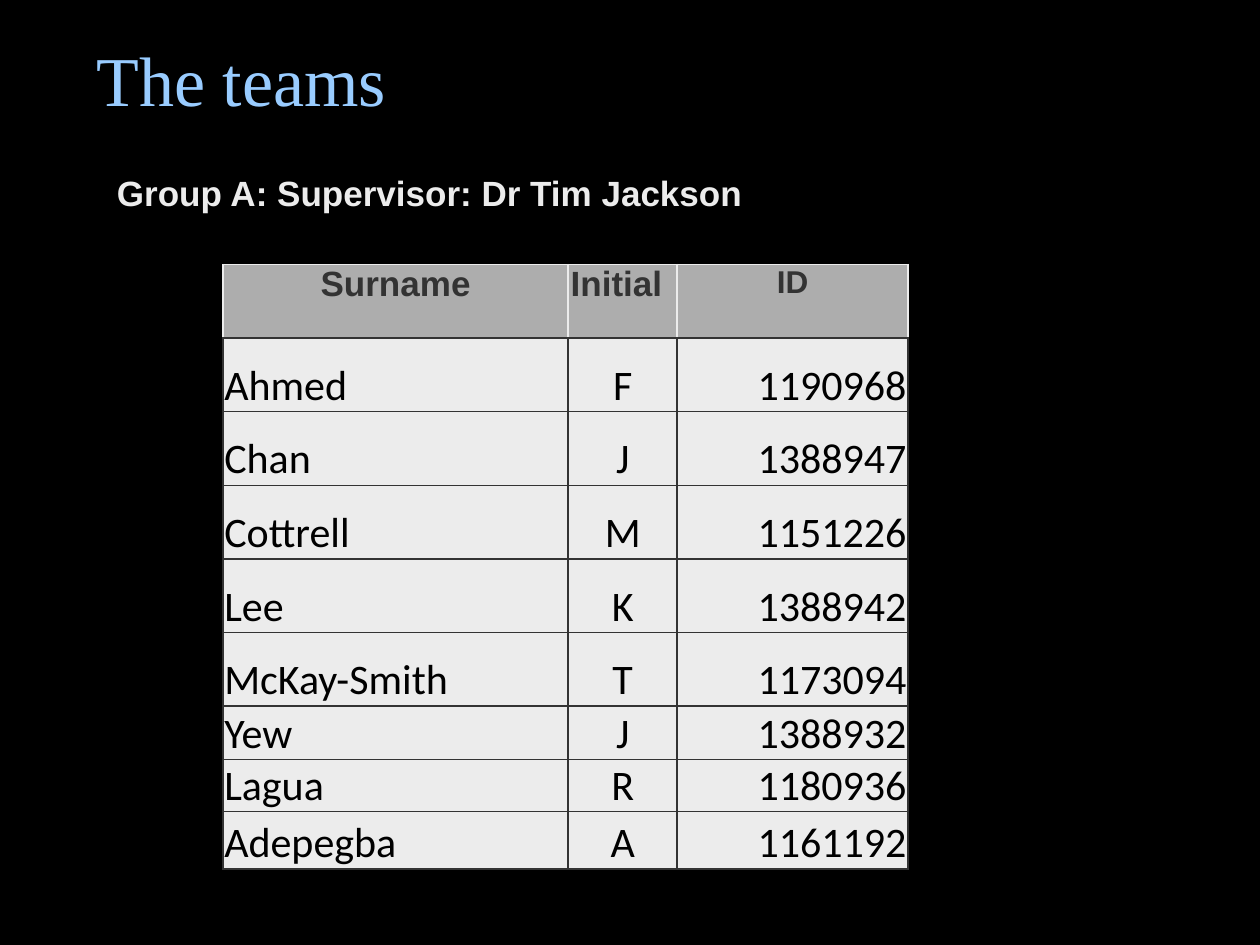
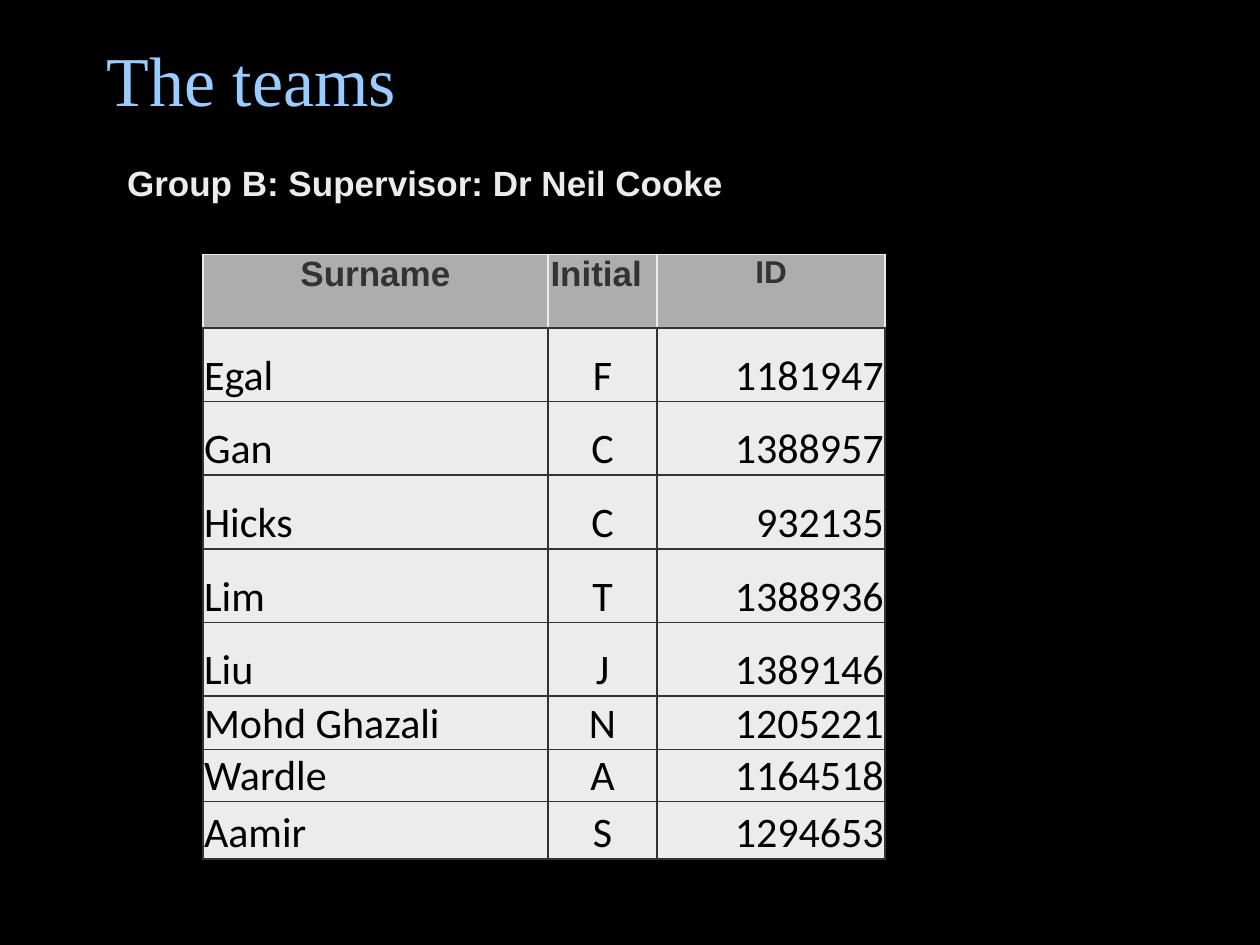
from lxml import etree
from pptx import Presentation
from pptx.dml.color import RGBColor
from pptx.enum.text import MSO_ANCHOR, PP_ALIGN
from pptx.oxml.ns import qn
from pptx.util import Inches, Pt

LEFT, CENTER, RIGHT = PP_ALIGN.LEFT, PP_ALIGN.CENTER, PP_ALIGN.RIGHT
TOP, MIDDLE, BOTTOM = MSO_ANCHOR.TOP, MSO_ANCHOR.MIDDLE, MSO_ANCHOR.BOTTOM

COLORS = {
    "background": "000000",
    "title": "99CCFF",
    "light": "ECECEC",
    "header": "ADADAD",
    "dark": "333333",
    "body": "000000",
}

presentation = Presentation()
presentation.slide_width = Inches(10)
presentation.slide_height = Inches(7.5)
COLUMN = presentation.slide_width / 100
ROW = presentation.slide_height / 75

ROW_HEIGHTS = [5.84] * 6 + [4.25, 4.14, 4.57]
HEADINGS = [("Surname", CENTER, 20), ("Initial", LEFT, 20), ("ID", CENTER, 18)]
BODY_ALIGNMENTS = [LEFT, CENTER, RIGHT]

# Positions are (column, row) on the slide grid.
TEAMS = [
    {
        "supervisor": "Group A: Supervisor: Dr Tim Jackson",
        "title_at": (6.7, 0),
        "supervisor_at": (8.3, 13.1),
        "supervisor_width": 59.8,
        "table_at": (17.7, 21),
        "column_widths": [27.4, 8.65, 18.3],
        "members": [
            ("Ahmed", "F", "1190968"),
            ("Chan", "J", "1388947"),
            ("Cottrell", "M", "1151226"),
            ("Lee", "K", "1388942"),
            ("McKay-Smith", "T", "1173094"),
            ("Yew", "J", "1388932"),
            ("Lagua", "R", "1180936"),
            ("Adepegba", "A", "1161192"),
        ],
    },
    {
        "supervisor": "Group B: Supervisor: Dr Neil Cooke",
        "title_at": (7.5, 0),
        "supervisor_at": (9.1, 12.3),
        "supervisor_width": 55.1,
        "table_at": (16.1, 20.2),
        "column_widths": [27.4, 8.65, 18.1],
        "members": [
            ("Egal", "F", "1181947"),
            ("Gan", "C", "1388957"),
            ("Hicks", "C", "932135"),
            ("Lim", "T", "1388936"),
            ("Liu", "J", "1389146"),
            ("Mohd Ghazali", "N", "1205221"),
            ("Wardle", "A", "1164518"),
            ("Aamir", "S", "1294653"),
        ],
    },
]


def write_text(text_frame, text, font_name, size, color, bold=False, alignment=LEFT):
    paragraph = text_frame.paragraphs[0]
    paragraph.alignment = alignment
    run = paragraph.add_run()
    run.text = text
    run.font.name = font_name
    run.font.size = Pt(size)
    run.font.bold = bold
    run.font.color.rgb = RGBColor.from_string(COLORS[color])


def style_cell(cell, fill, side_color, top_color, anchor, margins):
    """Set fill, anchor, margins and borders; the bottom border is always dark."""
    cell.fill.solid()
    cell.fill.fore_color.rgb = RGBColor.from_string(COLORS[fill])
    cell.vertical_anchor = anchor
    side_margin, top_margin = margins
    cell.margin_left = cell.margin_right = Inches(side_margin)
    cell.margin_top = Inches(top_margin)
    cell.margin_bottom = 0
    borders = {"lnL": side_color, "lnR": side_color, "lnT": top_color, "lnB": "dark"}
    properties = cell.fill._xPr
    for position, (tag, color) in enumerate(borders.items()):
        line = etree.Element(qn(f"a:{tag}"), w=str(Pt(1)))
        solid_fill = etree.SubElement(line, qn("a:solidFill"))
        etree.SubElement(solid_fill, qn("a:srgbClr"), val=COLORS[color])
        properties.insert(position, line)


for team in TEAMS:
    slide = presentation.slides.add_slide(presentation.slide_layouts[6])
    slide.background.fill.solid()
    slide.background.fill.fore_color.rgb = RGBColor.from_string(COLORS["background"])

    column, row = team["title_at"]
    title = slide.shapes.add_textbox(
        int(column * COLUMN), int(row * ROW), int(85 * COLUMN), int(12.5 * ROW))
    title.text_frame.word_wrap = True
    title.text_frame.vertical_anchor = MIDDLE
    write_text(title.text_frame, "The teams", "Times New Roman", 40, "title")

    column, row = team["supervisor_at"]
    supervisor = slide.shapes.add_textbox(
        int(column * COLUMN), int(row * ROW),
        int(team["supervisor_width"] * COLUMN), int(4.4 * ROW))
    write_text(supervisor.text_frame, team["supervisor"], "Arial", 20, "light", bold=True)

    column, row = team["table_at"]
    table = slide.shapes.add_table(
        len(ROW_HEIGHTS), len(HEADINGS), int(column * COLUMN), int(row * ROW),
        int(sum(team["column_widths"]) * COLUMN), int(sum(ROW_HEIGHTS) * ROW)).table
    table.first_row = table.horz_banding = False
    for table_column, width in zip(table.columns, team["column_widths"]):
        table_column.width = int(width * COLUMN)
    for table_row, height in zip(table.rows, ROW_HEIGHTS):
        table_row.height = int(height * ROW)

    for column_index, (heading, alignment, size) in enumerate(HEADINGS):
        cell = table.cell(0, column_index)
        style_cell(cell, "header", "light", "light", TOP, (0.02, 0))
        write_text(cell.text_frame, heading, "Arial", size, "dark", True, alignment)

    for row_index, member in enumerate(team["members"], start=1):
        for column_index, value in enumerate(member):
            cell = table.cell(row_index, column_index)
            style_cell(cell, "light", "dark", "dark", BOTTOM, (0.01, 0.01))
            write_text(cell.text_frame, value, "Calibri", 24, "body",
                       alignment=BODY_ALIGNMENTS[column_index])

presentation.save("out.pptx")
